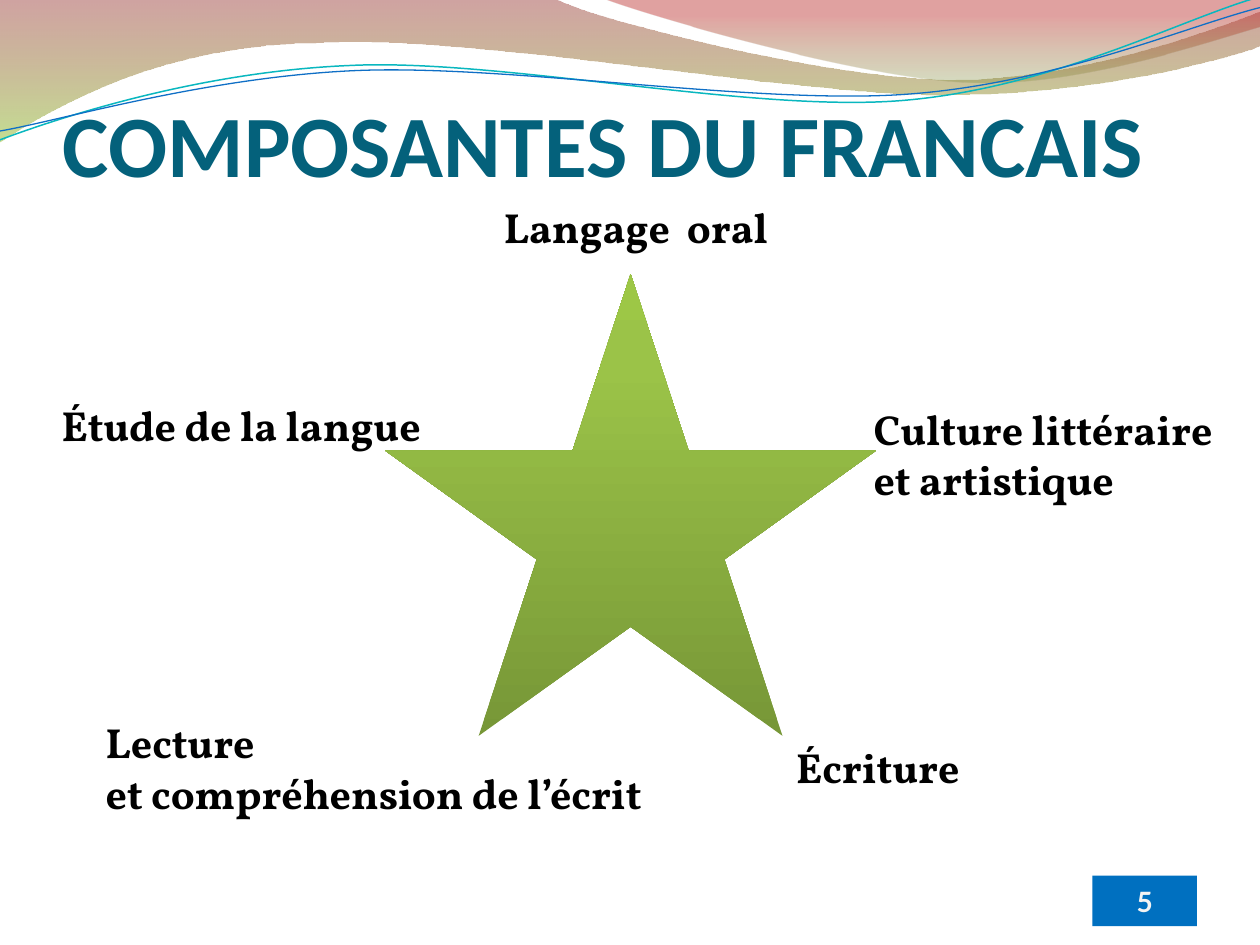
import math
from dataclasses import dataclass
from typing import Optional

from lxml import etree
from pptx import Presentation
from pptx import util as u
from pptx.dml.color import RGBColor
from pptx.enum import shapes, text
from pptx.oxml import ns

# The slide is a grid of 100 columns by 75 rows
COLUMNS, ROWS = 100, 75
CELL = u.Inches(0.1)

COLORS = {
    "title": "04617B", "label": "000000", "badge": "0070C0", "number": "F3F3F3",
    "teal": "09B7BF", "blue": "0F6FC6",
    "red": "973330", "lime": "95C238", "olive": "769537", "coral": "BE3330",
    "star dark": "779737", "star mid": "9BC348", "star light": "9DC746",
}

Point = tuple[float, float]


@dataclass
class Gradient:
    stops: list[tuple[int, str, int]]  # position %, colour, opacity %
    angle: int  # counter-clockwise


@dataclass
class Wave:
    start: Point
    steps: list[tuple[Point, ...]]  # one point: straight, three points: curve
    gradient: Optional[Gradient] = None
    line: str = ""
    weight: float = 0
    tilt: float = 0  # degrees clockwise
    centre: Point = (0, 0)


@dataclass
class Label:
    lines: list[str]
    left: float
    top: float
    width: float
    height: float


WAVES = [
    Wave((0, 0), [((44, -0.1),),
                  ((47.6, 1.7), (66.3, 6.3), (75.8, 6.3)),
                  ((85.3, 6.3), (95.8, 2.6), (100, 0.9)),
                  ((100.1, 3.6),),
                  ((98.3, 4.4), (87, 7.6), (74.6, 7.5)),
                  ((62.2, 7.5), (38.2, 2.8), (25.7, 3.4)),
                  ((12.9, 3.5), (4.6, 8.3), (-0.1, 11.3)),
                  ((0, 0),)],
         Gradient([(0, "red", 45), (100, "lime", 55)], 270)),
    Wave((47.9, -0.1), [((50.9, 1.1), (68.2, 6.2), (76.9, 6.5)),
                        ((85.5, 6.9), (96.1, 3.2), (100, 2.1)),
                        ((100, 0),),
                        ((47.9, -0.1),)],
         Gradient([(0, "olive", 30), (80, "coral", 45)], 90)),
    Wave((0, 11.1), [((4.8, 9.3), (15.8, 5.7), (27.7, 5.2)),
                     ((39.5, 4.6), (59.2, 8.9), (71.3, 8)),
                     ((83.3, 7.1), (93.8, 1.5), (99.8, -0.2))],
         line="teal", weight=0.85, tilt=-2.7, centre=(49.9, 5.75)),
    Wave((0, 10.4), [((4.7, 9.6), (16.4, 6.1), (28.3, 5.6)),
                     ((40.3, 5.1), (59.7, 8.3), (71.7, 7.5)),
                     ((83.6, 6.7), (94.1, 2.1), (100, 0.6))],
         line="blue", weight=0.75, tilt=-2.7, centre=(49.95, 5.9)),
]

LABELS = [
    Label(["Langage  oral"], 39, 15.5, 23.2, 8),
    Label(["Lecture", "et compréhension de l’écrit"], 7.4, 56.4, 44.7, 9),
    Label(["Écriture"], 62.2, 58.35, 15.2, 5),
    Label(["Étude de la langue"], 3.9, 31.2, 31.4, 5),
    Label(["Culture littéraire", "et artistique"], 68.35, 31.5, 29.4, 9),
]


def grid(*cells: float) -> list[u.Emu]:
    return [u.Emu(round(cell * CELL)) for cell in cells]


def rgb(name: str) -> RGBColor:
    return RGBColor.from_string(COLORS[name])


def turn(point: Point, centre: Point, degrees: float) -> Point:
    angle = math.radians(degrees)
    across, down = point[0] - centre[0], point[1] - centre[1]
    return (centre[0] + across * math.cos(angle) - down * math.sin(angle),
            centre[1] + across * math.sin(angle) + down * math.cos(angle))


def fill_gradient(shape, gradient: Gradient) -> None:
    shape.fill.gradient()
    shape.fill.gradient_angle = gradient.angle
    stop_list = next(shape.element.iter(ns.qn("a:gsLst")))
    for stop in list(stop_list):
        stop_list.remove(stop)
    for position, name, opacity in gradient.stops:
        stop = etree.SubElement(stop_list, ns.qn("a:gs"), pos=str(position * 1000))
        color = etree.SubElement(stop, ns.qn("a:srgbClr"), val=COLORS[name])
        if opacity < 100:
            etree.SubElement(color, ns.qn("a:alpha"), val=str(opacity * 1000))


def bend(shape, steps: list[tuple[Point, ...]]) -> None:
    """Join the three straight segments of each curved step into one Bézier."""
    segments = iter(list(shape.element.iter(ns.qn("a:lnTo"))))
    for step in steps:
        parts = [next(segments) for _ in step]
        if len(parts) == 3:
            curve = etree.Element(ns.qn("a:cubicBezTo"))
            parts[0].addprevious(curve)
            for part in parts:
                curve.append(part[0])
                part.getparent().remove(part)


def draw_wave(page, wave: Wave) -> None:
    points = [wave.start] + [point for step in wave.steps for point in step]
    level = [grid(*turn(point, wave.centre, -wave.tilt)) for point in points]
    builder = page.shapes.build_freeform(*level[0], scale=1.0)
    builder.add_line_segments(level[1:], close=False)
    shape = builder.convert_to_shape()
    bend(shape, wave.steps)
    shape.rotation = wave.tilt
    shape.shadow.inherit = False
    if wave.gradient:
        fill_gradient(shape, wave.gradient)
        shape.line.fill.background()
    else:
        shape.fill.background()
        shape.line.color.rgb = rgb(wave.line)
        shape.line.width = u.Pt(wave.weight)


def write(box, lines: list[str], size: float, font: str, color: str,
          align=text.PP_ALIGN.LEFT) -> None:
    frame = box.text_frame
    for index, line in enumerate(lines):
        para = frame.paragraphs[0] if index == 0 else frame.add_paragraph()
        para.text = line
        para.alignment = align
        para.font.size, para.font.name, para.font.bold = u.Pt(size), font, True
        para.font.color.rgb = rgb(color)


def draw_label(page, label: Label) -> None:
    box = page.shapes.add_textbox(*grid(label.left, label.top, label.width, label.height))
    box.text_frame.word_wrap = False
    write(box, label.lines, 24, "Vollkorn", "label")


def draw_title(page, title: str) -> None:
    box = page.shapes.add_textbox(*grid(5, 3, 90, 12.5))
    frame = box.text_frame
    frame.word_wrap = True
    frame.vertical_anchor = text.MSO_ANCHOR.BOTTOM
    frame.margin_left = frame.margin_right = frame.margin_bottom = 0
    write(box, [title], 50, "Calibri", "title")


def draw_preset(page, kind, *cells: float):
    shape = page.shapes.add_shape(kind, *grid(*cells))
    shape.shadow.inherit = False
    shape.line.fill.background()
    return shape


def draw_page_number(page, number: str) -> None:
    badge = draw_preset(page, shapes.MSO_SHAPE.RECTANGLE, 86.7, 69.5, 8.3, 4)
    badge.fill.solid()
    badge.fill.fore_color.rgb = rgb("badge")
    frame = badge.text_frame
    frame.margin_left = frame.margin_right = frame.margin_top = frame.margin_bottom = 0
    frame.vertical_anchor = text.MSO_ANCHOR.MIDDLE
    write(badge, [number], 16, "Lato", "number", text.PP_ALIGN.CENTER)


def main() -> None:
    deck = Presentation()
    deck.slide_width, deck.slide_height = grid(COLUMNS, ROWS)
    page = deck.slides.add_slide(deck.slide_layouts[6])

    # Wavy header
    for wave in WAVES:
        draw_wave(page, wave)
    # Title and page number
    draw_title(page, "COMPOSANTES DU FRANCAIS")
    draw_page_number(page, "5")
    # Star and the component at each point
    for label in LABELS:
        draw_label(page, label)
    star = draw_preset(page, shapes.MSO_SHAPE.STAR_5_POINT, 30.55, 21.75, 39, 36.65)
    fill_gradient(star, Gradient([(0, "star dark", 100), (80, "star mid", 100),
                                  (100, "star light", 100)], 90))
    deck.save("out.pptx")


if __name__ == "__main__":
    main()
